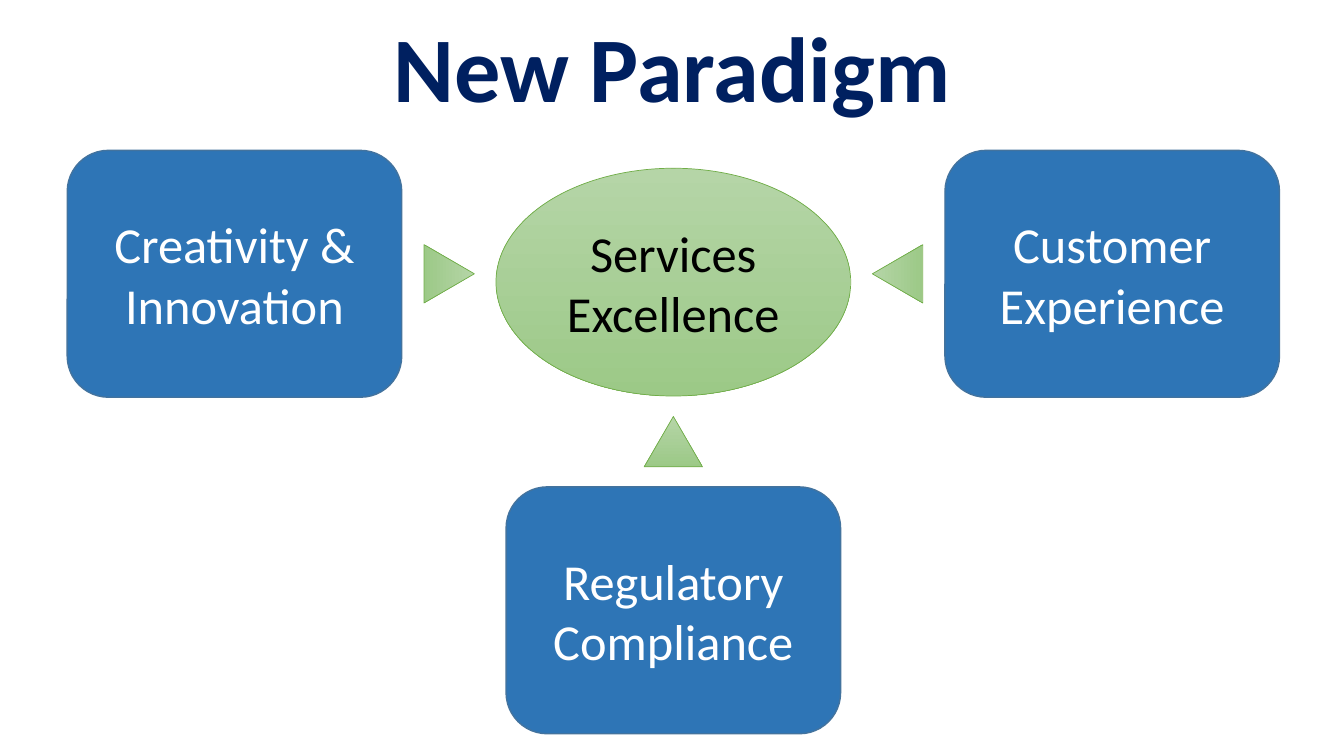
from pptx import Presentation
from pptx.dml.color import RGBColor
from pptx.enum.shapes import MSO_SHAPE
from pptx.enum.text import MSO_ANCHOR, PP_ALIGN
from pptx.util import Cm, Pt

TITLE = "New Paradigm"
GOAL = "Services Excellence"
AXIS = 16.97  # horizontal centre of the diagram, in cm
ROW = 6.9  # vertical centre of the upper row, in cm

# text, box centre, arrow centre, arrow rotation
DRIVERS = [
    ("Creativity & Innovation", (AXIS - 11.06, ROW), (AXIS - 5.65, ROW), 90),
    ("Customer Experience", (AXIS + 11.06, ROW), (AXIS + 5.65, ROW), 270),
    ("Regulatory Compliance", (AXIS, 15.38), (AXIS, 11.13), 0),
]
BOX_SIZE = (8.43, 6.22)
ARROW_SIZE = (1.47, 1.27)
GOAL_SIZE = (8.94, 5.74)

NAVY, BLUE, BLUE_EDGE = "002060", "2E75B6", "43739E"
GREEN_TOP, GREEN_BOTTOM, GREEN_EDGE = "B5D5A7", "9CC987", "70AD47"


def color(hex_string):
    return RGBColor.from_string(hex_string)


def write(shape, text, size=36, ink="FFFFFF", bold=False, line_spacing=1.0):
    frame = shape.text_frame
    frame.word_wrap = True
    frame.vertical_anchor = MSO_ANCHOR.MIDDLE
    paragraph = frame.paragraphs[0]
    paragraph.alignment = PP_ALIGN.CENTER
    paragraph.line_spacing = line_spacing
    run = paragraph.add_run()
    run.text = text
    run.font.name = "Calibri"
    run.font.size = Pt(size)
    run.font.bold = bold
    run.font.color.rgb = color(ink)


def add_centred(slide, kind, centre, size, edge, edge_width):
    """Add a preset shape around its centre point, in cm."""
    left, top = (middle - length / 2 for middle, length in zip(centre, size))
    shape = slide.shapes.add_shape(kind, Cm(left), Cm(top), *map(Cm, size))
    shape.shadow.inherit = False
    shape.line.color.rgb = color(edge)
    shape.line.width = Pt(edge_width)
    return shape


def add_green(slide, kind, centre, size):
    shape = add_centred(slide, kind, centre, size, GREEN_EDGE, 0.5)
    shape.fill.gradient()
    shape.fill.gradient_angle = 270
    for stop, tint, position in zip(
        shape.fill.gradient_stops, (GREEN_TOP, GREEN_BOTTOM), (0, 1)
    ):
        stop.color.rgb = color(tint)
        stop.position = position
    return shape


def main():
    presentation = Presentation()
    presentation.slide_width = Cm(33.87)
    presentation.slide_height = Cm(19.05)
    slide = presentation.slides.add_slide(presentation.slide_layouts[6])

    title = slide.shapes.add_textbox(Cm(2.33), Cm(0), Cm(29.21), Cm(3.68))
    write(title, TITLE, size=66, ink=NAVY, bold=True, line_spacing=0.9)

    goal = add_green(slide, MSO_SHAPE.OVAL, (AXIS, 7.11), GOAL_SIZE)
    write(goal, GOAL, ink="000000")

    for text, box_centre, arrow_centre, rotation in DRIVERS:
        box = add_centred(
            slide, MSO_SHAPE.ROUNDED_RECTANGLE, box_centre, BOX_SIZE, BLUE_EDGE, 1
        )
        box.fill.solid()
        box.fill.fore_color.rgb = color(BLUE)
        write(box, text)
        arrow = add_green(slide, MSO_SHAPE.ISOSCELES_TRIANGLE, arrow_centre, ARROW_SIZE)
        arrow.rotation = rotation

    presentation.save("out.pptx")


if __name__ == "__main__":
    main()
